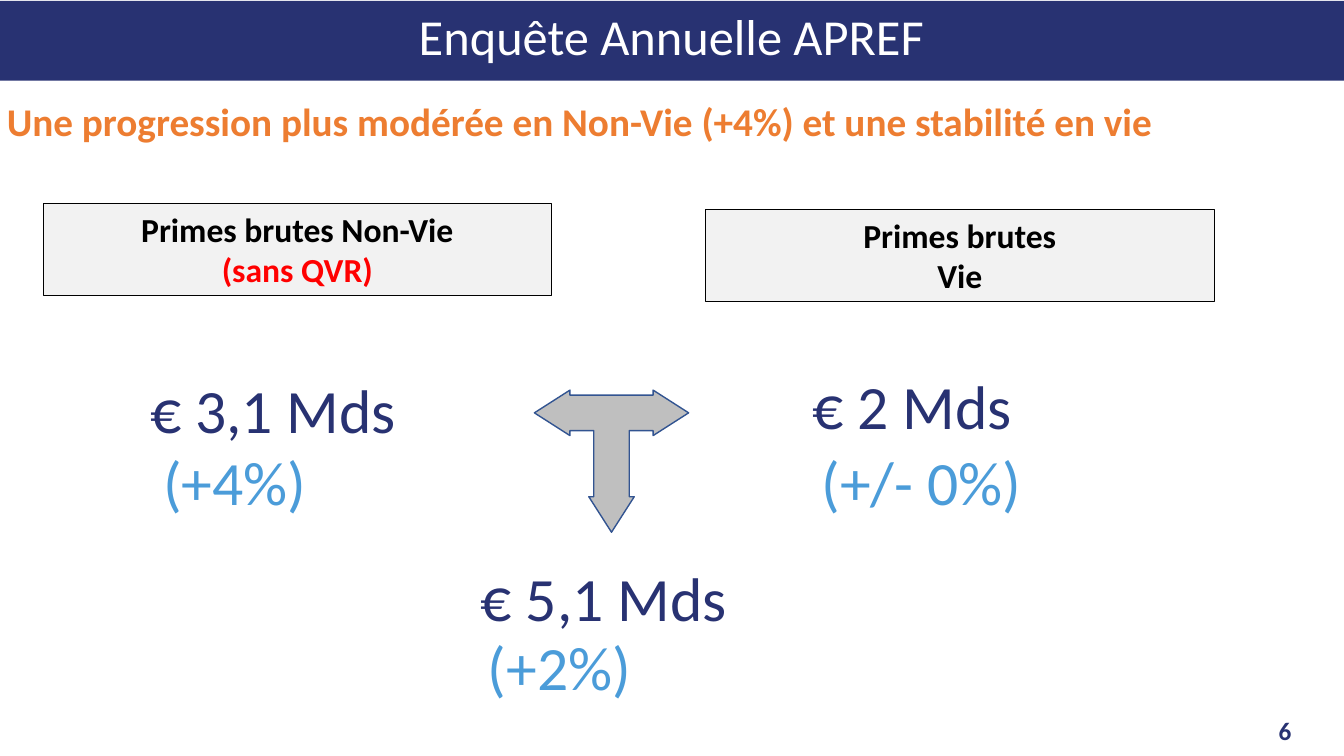
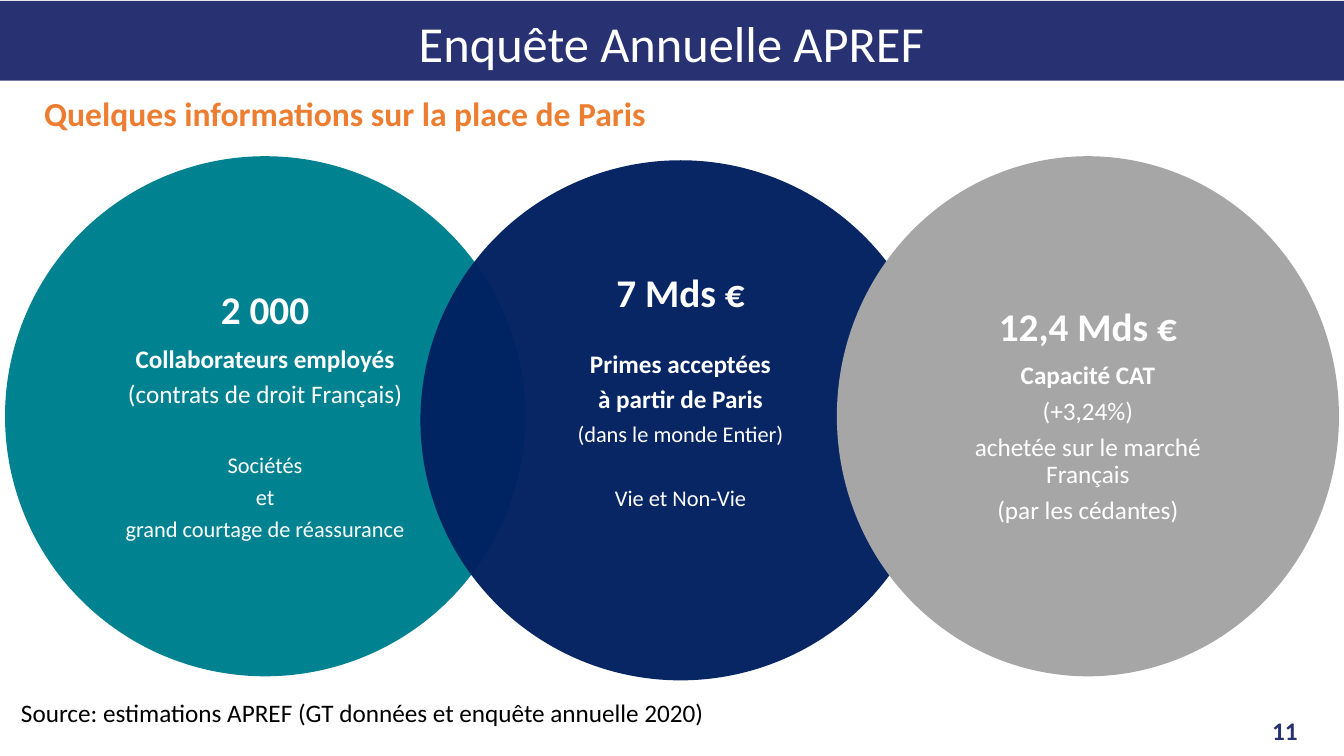
from dataclasses import dataclass

from lxml import etree
from pptx import Presentation
from pptx.dml.color import RGBColor
from pptx.enum.shapes import MSO_SHAPE
from pptx.enum.text import MSO_ANCHOR, PP_ALIGN
from pptx.oxml.ns import qn
from pptx.util import Emu, Pt

RECTANGLE, ELLIPSE = MSO_SHAPE.RECTANGLE, MSO_SHAPE.OVAL
THREE_WAY_ARROW = MSO_SHAPE.LEFT_RIGHT_UP_ARROW
LEFT, CENTER = PP_ALIGN.LEFT, PP_ALIGN.CENTER
TOP, MIDDLE = MSO_ANCHOR.TOP, MSO_ANCHOR.MIDDLE

EMU_PER_PX = 9144  # 100 px to the inch
SLIDE_WIDTH, SLIDE_HEIGHT = 1333, 750


@dataclass(frozen=True)
class Theme:
    font: str = "Calibri"
    # Colours
    navy: str = "283272"
    orange: str = "ED7D31"
    sky: str = "4B9CD9"
    red: str = "FF0000"
    black: str = "000000"
    white: str = "FFFFFF"
    panel: str = "F2F2F2"
    arrow_fill: str = "BFBFBF"
    arrow_line: str = "325491"
    teal: str = "008291"
    midnight: str = "002060"
    grey: str = "A6A6A6"
    # Type sizes
    figure: int = 44
    title: int = 36
    headline: int = 28
    heading: int = 24
    body: int = 18
    small: int = 16


THEME = Theme()


def px(length):
    return Emu(length * EMU_PER_PX)


def write(frame, text, *, size, color=THEME.black, bold=False, align=LEFT,
          line_spacing=None, before=0, after=0):
    """Write one paragraph, using the empty first one when it is free."""
    paragraph = frame.paragraphs[0]
    if paragraph.runs:
        paragraph = frame.add_paragraph()
    paragraph.alignment = align
    paragraph.line_spacing = line_spacing
    paragraph.space_before, paragraph.space_after = Pt(before), Pt(after)
    run = paragraph.add_run()
    run.text = text
    run.font.name, run.font.size, run.font.bold = THEME.font, Pt(size), bold
    run.font.color.rgb = RGBColor.from_string(color)


class Deck:
    def __init__(self, theme):
        self.theme = theme
        self.presentation = Presentation()
        self.presentation.slide_width = px(SLIDE_WIDTH)
        self.presentation.slide_height = px(SLIDE_HEIGHT)
        self.slide = None

    def frame(self, shape, anchor, insets):
        frame = shape.text_frame
        frame.word_wrap, frame.vertical_anchor = True, anchor
        (frame.margin_left, frame.margin_top,
         frame.margin_right, frame.margin_bottom) = map(px, insets)
        return frame

    def text(self, text, left, top, width, height, *, anchor=TOP, **style):
        box = self.slide.shapes.add_textbox(*map(px, (left, top, width, height)))
        write(self.frame(box, anchor, (10, 5, 10, 5)), text, **style)

    def shape(self, kind, left, top, width, height, fill, line=None, line_width=1):
        shape = self.slide.shapes.add_shape(
            kind, *map(px, (left, top, width, height)))
        shape.shadow.inherit = False
        shape.fill.solid()
        shape.fill.fore_color.rgb = RGBColor.from_string(fill)
        if line:
            shape.line.color.rgb = RGBColor.from_string(line)
            shape.line.width = Pt(line_width)
        else:
            shape.line.fill.background()
        return shape

    def new_slide(self, number, title_top):
        """Start a slide with the title band and the page number."""
        theme = self.theme
        self.slide = self.presentation.slides.add_slide(
            self.presentation.slide_layouts[6])
        self.shape(RECTANGLE, 0, 1, SLIDE_WIDTH, 79, theme.navy)
        self.text("Enquête Annuelle APREF", 43, title_top, 1246, 67, anchor=MIDDLE,
                  size=theme.title, color=theme.white, align=CENTER, line_spacing=0.9)
        self.text(str(number), 1216, 702, 117, 45, anchor=MIDDLE,
                  size=theme.body, color=theme.navy, bold=True, align=CENTER)

    def headline(self, text, left, top, size):
        self.text(text, left, top, 1300 - left, 60, size=size,
                  color=self.theme.orange, bold=True)

    def panel(self, left, top, line_width, lines):
        panel = self.shape(RECTANGLE, left, top, 504, 91, self.theme.panel,
                           self.theme.black, line_width)
        frame = self.frame(panel, TOP, (10, 5, 10, 5))
        for text, color in lines:
            write(frame, text, size=self.theme.heading, color=color, bold=True,
                  align=CENTER)

    def figure(self, text, left, top, color):
        self.text(text, left, top, 300, 84, size=self.theme.figure, color=color)

    def circle(self, left, top, width, fill, lines, opacity=100, lift=0):
        """Draw a disc; lift raises its text by deepening the bottom inset."""
        disc = self.shape(ELLIPSE, left, top, width, 516, fill)
        if opacity < 100:
            color = disc.element.find(".//" + qn("a:srgbClr"))
            etree.SubElement(color, qn("a:alpha"), val=str(opacity * 1000))
        frame = self.frame(disc, MIDDLE, (28, 4, 28, 4 + 2 * lift))
        for text, size, bold, before in lines:
            write(frame, text, size=size, color=self.theme.white, bold=bold,
                  align=CENTER, line_spacing=0.9, before=before,
                  after=round(size * 0.34, 1))


def premiums_slide(deck):
    theme = deck.theme
    deck.new_slide(6, title_top=5)
    deck.headline("Une progression plus modérée en Non-Vie (+4%) et une stabilité en vie",
                  -3, 92, theme.headline)

    # Headings of the two branches
    deck.panel(43, 202, 0.75, [("Primes brutes Non-Vie", theme.black),
                               ("(sans QVR)", theme.red)])
    deck.panel(700, 208, 0.5, [("Primes brutes", theme.black), ("Vie", theme.black)])

    # Arrow from both branches to the total
    arrow = deck.shape(THREE_WAY_ARROW, 530, 387, 153, 141,
                       theme.arrow_fill, theme.arrow_line)
    arrow.rotation = 180
    for index, value in enumerate((0.25, 0.16, 0.25)):
        arrow.adjustments[index] = value

    # Amounts and their changes
    for text, left, top, color in (
            ("€ 3,1 Mds", 139, 364, theme.navy), ("(+4%)", 152, 436, theme.sky),
            ("€ 2 Mds", 796, 360, theme.navy), ("(+/- 0%)", 805, 436, theme.sky),
            ("€ 5,1 Mds", 467, 551, theme.navy), ("(+2%)", 474, 619, theme.sky)):
        deck.figure(text, left, top, color)


def paris_slide(deck):
    theme = deck.theme
    big, body, small = theme.headline, theme.body, theme.small
    deck.new_slide(11, title_top=12)
    deck.headline("Quelques informations sur la place de Paris", 34, 87, theme.heading)
    deck.text("Source: estimations APREF (GT données et enquête annuelle 2020)",
              11, 670, 1200, 78, anchor=MIDDLE, size=body, line_spacing=0.9)

    # Overlapping discs: text, size, bold, space before
    deck.circle(5, 155, 516, theme.teal, [
        ("2 000", big, True, 0),
        ("Collaborateurs employés", body, True, 0),
        ("(contrats de droit Français)", body, False, 0),
        ("Sociétés", small, False, 26),
        ("et", small, False, 0),
        ("grand courtage de réassurance", small, False, 0)])
    deck.circle(417, 159, 516, theme.midnight, [
        ("7 Mds €", big, True, 0),
        ("Primes acceptées", body, True, 16),
        ("à partir de Paris", body, True, 0),
        ("(dans le monde Entier)", small, False, 0),
        ("Vie et Non-Vie", small, False, 23)], opacity=97, lift=28)
    deck.circle(830, 155, 498, theme.grey, [
        ("12,4 Mds €", big, True, 0),
        ("Capacité CAT", body, True, 0),
        ("(+3,24%)", body, False, 0),
        ("achetée sur le marché Français", body, False, 0),
        ("(par les cédantes)", body, False, 0)])


def main():
    deck = Deck(THEME)
    premiums_slide(deck)
    paris_slide(deck)
    deck.presentation.save("out.pptx")


if __name__ == "__main__":
    main()
